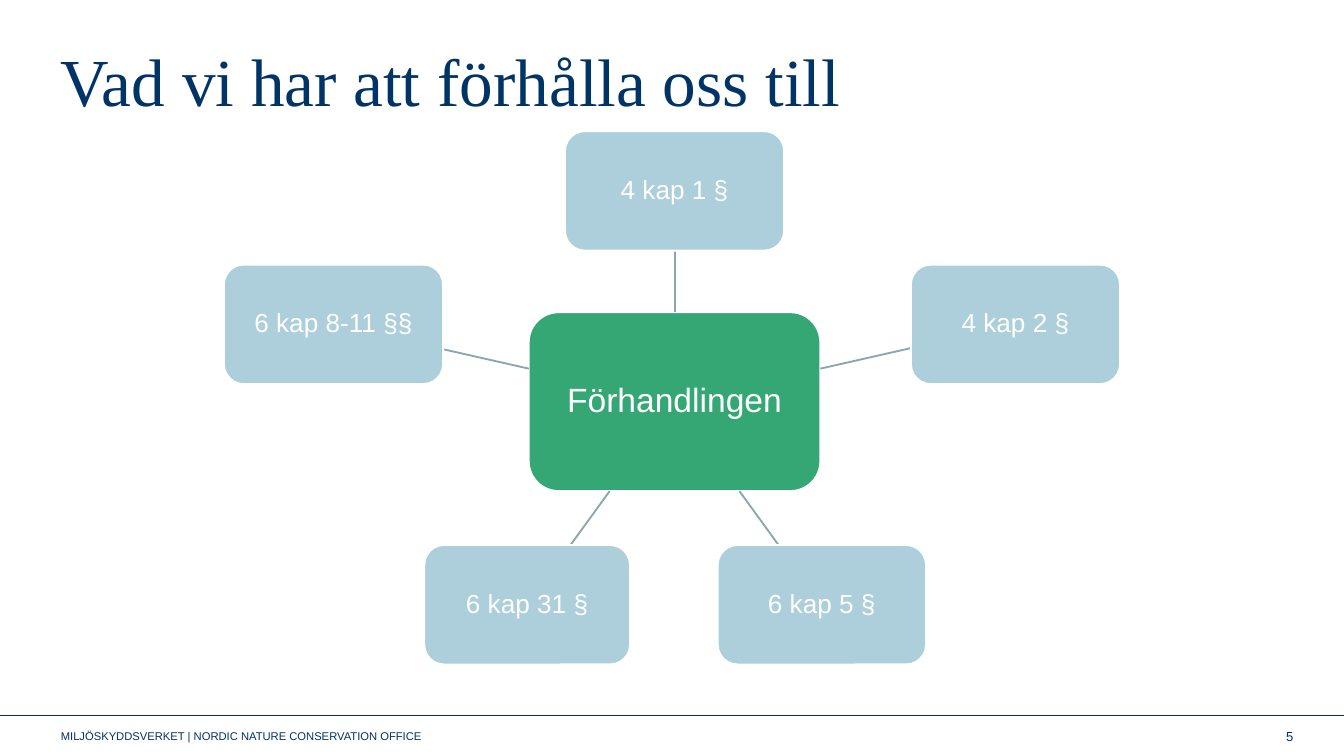
from dataclasses import dataclass

from lxml import etree
from pptx import Presentation
from pptx.dml.color import RGBColor
from pptx.enum.shapes import MSO_CONNECTOR, MSO_SHAPE
from pptx.enum.text import MSO_ANCHOR, PP_ALIGN
from pptx.oxml.ns import qn
from pptx.slide import Slide
from pptx.text.text import TextFrame
from pptx.util import Pt

LINE, ROUND = MSO_CONNECTOR.STRAIGHT, MSO_SHAPE.ROUNDED_RECTANGLE
TOP, MIDDLE = MSO_ANCHOR.TOP, MSO_ANCHOR.MIDDLE
LEFT, CENTER, RIGHT = PP_ALIGN.LEFT, PP_ALIGN.CENTER, PP_ALIGN.RIGHT
COLORS = {"navy": "003366", "green": "34A775", "blue": "ACCFDB", "gray": "8AA6AF", "white": "FFFFFF"}
WIDTH, HEIGHT = 720, 405
RULE_Y = 383.5


@dataclass
class Node:
    """A box given by its centre and size in points."""
    text: str
    x: float
    y: float
    width: float
    height: float = 64
    fill: str = "blue"
    size: float = 14


@dataclass
class Label:
    """A free text with its frame in points."""
    text: str
    left: float
    top: float
    width: float
    height: float
    size: float
    font: str = "Arial"
    align: PP_ALIGN = LEFT
    anchor: MSO_ANCHOR = MIDDLE
    spacing: float | None = None


HUB = Node("Förhandlingen", 361.4, 215.2, 156.2, 95.8, "green", 18)
NODES = [
    Node("4 kap 1 §", 361.4, 102.3, 117.4),
    Node("4 kap 2 §", 544, 173.8, 112),
    Node("6 kap 5 §", 440.3, 324, 111.6),
    Node("6 kap 31 §", 282.4, 324, 110.2),
    Node("6 kap 8-11 §§", 178.7, 173.8, 117.4),
]
LABELS = [
    Label("Vad vi har att förhålla oss till", 25.5, 20.9, 674.6, 57.6, 36, "Times New Roman", LEFT, TOP, 39.6),
    Label("MILJÖSKYDDSVERKET | NORDIC NATURE CONSERVATION OFFICE", 25.5, RULE_Y, 243.4, 21.6, 6),
    Label("5", 538, RULE_Y, 162, 21.6, 7, align=RIGHT),
]


def color(name: str) -> RGBColor:
    """Look up a named colour."""
    return RGBColor.from_string(COLORS[name])


def write(frame: TextFrame, text: str, size: float, font: str, ink: str, align: PP_ALIGN, anchor: MSO_ANCHOR) -> None:
    """Fill a text frame with one styled paragraph."""
    frame.word_wrap = True
    frame.vertical_anchor = anchor
    para = frame.paragraphs[0]
    para.text = text
    para.alignment = align
    para.font.size = Pt(size)
    para.font.name = font
    para.font.color.rgb = color(ink)


def add_label(slide: Slide, label: Label) -> None:
    """Add a free text."""
    box = slide.shapes.add_textbox(Pt(label.left), Pt(label.top), Pt(label.width), Pt(label.height))
    write(box.text_frame, label.text, label.size, label.font, "navy", label.align, label.anchor)
    if label.spacing:
        box.text_frame.paragraphs[0].line_spacing = Pt(label.spacing)


def add_line(slide: Slide, start: tuple[float, float], end: tuple[float, float], ink: str, weight: float) -> None:
    """Add a straight line without a shadow."""
    line = slide.shapes.add_connector(LINE, *(Pt(value) for value in start + end))
    line.line.color.rgb = color(ink)
    line.line.width = Pt(weight)
    etree.SubElement(line._element.spPr, qn("a:effectLst"))


def add_node(slide: Slide, node: Node) -> None:
    """Add a rounded box with centred text."""
    left, top = node.x - node.width / 2, node.y - node.height / 2
    box = slide.shapes.add_shape(ROUND, Pt(left), Pt(top), Pt(node.width), Pt(node.height))
    box.shadow.inherit = False
    box.fill.solid()
    box.fill.fore_color.rgb = color(node.fill)
    box.line.color.rgb = color("white")
    box.line.width = Pt(1)
    frame = box.text_frame
    frame.margin_left = frame.margin_right = frame.margin_top = frame.margin_bottom = Pt(3)
    write(frame, node.text, node.size, "Arial", "white", CENTER, MIDDLE)
    frame.paragraphs[0].line_spacing = 0.9


def edge(node: Node, other: Node) -> tuple[float, float]:
    """Find where the line between two centres leaves the first box."""
    run, rise = other.x - node.x, other.y - node.y
    share = 1 / max(abs(run) / (node.width / 2), abs(rise) / (node.height / 2))
    return node.x + run * share, node.y + rise * share


def main() -> None:
    """Build the slide and save it."""
    deck = Presentation()
    deck.slide_width, deck.slide_height = Pt(WIDTH), Pt(HEIGHT)
    slide = deck.slides.add_slide(deck.slide_layouts[6])
    add_line(slide, (0, RULE_Y), (WIDTH, RULE_Y), "navy", 0.4)
    for label in LABELS:
        add_label(slide, label)
    add_node(slide, HUB)
    for node in NODES:
        add_line(slide, edge(HUB, node), edge(node, HUB), "gray", 1)
        add_node(slide, node)
    deck.save("out.pptx")


if __name__ == "__main__":
    main()
